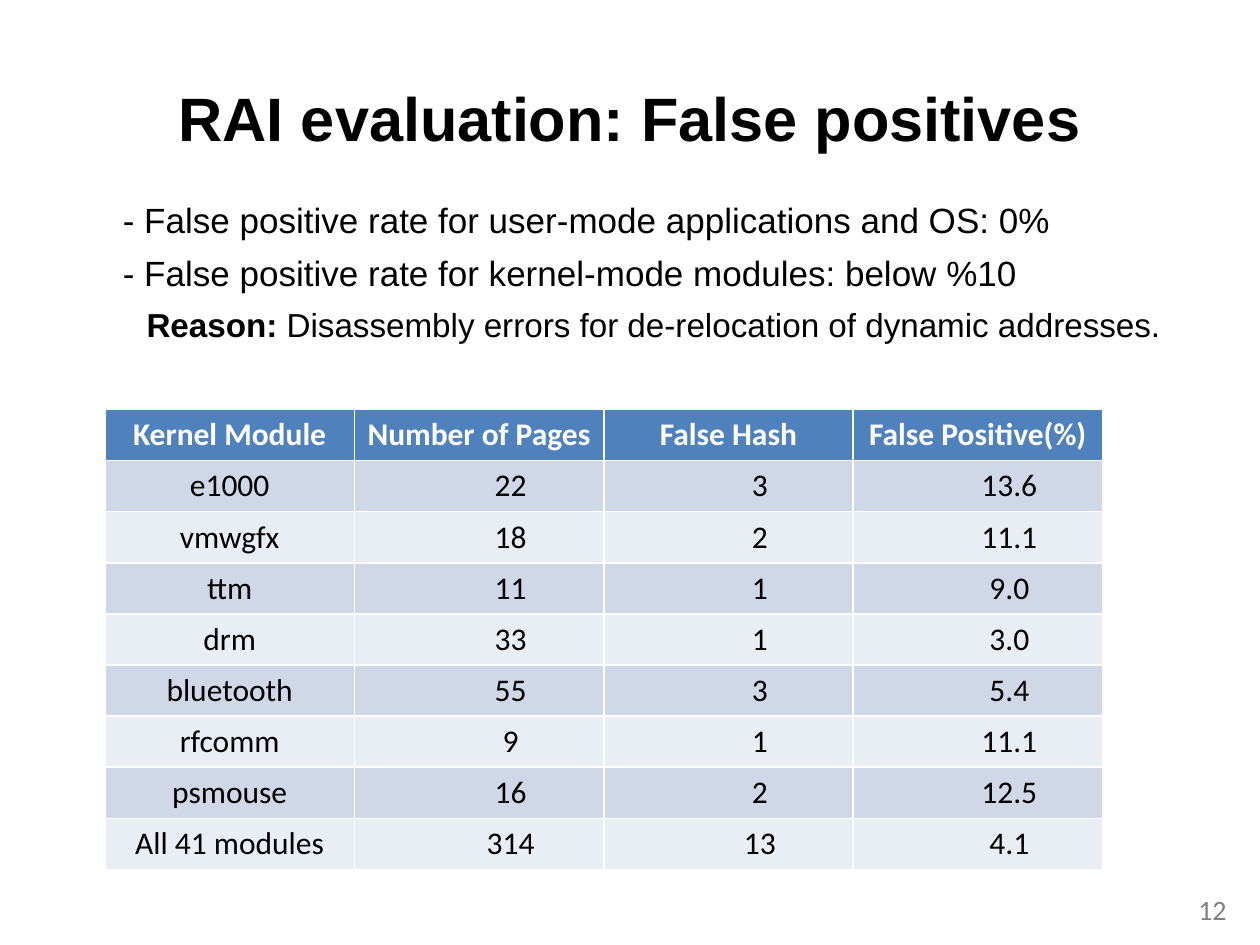
import lxml.etree
import pptx
import pptx.util
import pptx.dml.color
import pptx.enum.text
import pptx.oxml.ns

Pt = pptx.util.Pt
RGB = pptx.dml.color.RGBColor
ALIGN = pptx.enum.text.PP_ALIGN
ANCHOR = pptx.enum.text.MSO_ANCHOR
NO_FIT = pptx.enum.text.MSO_AUTO_SIZE.NONE

BLACK = RGB(0x00, 0x00, 0x00)
WHITE = RGB(0xFF, 0xFF, 0xFF)
GREY = RGB(0x80, 0x80, 0x80)
HEADER = RGB(0x4F, 0x81, 0xBD)
BANDS = (RGB(0xD0, 0xD8, 0xE8), RGB(0xE9, 0xED, 0xF4))

ROWS = [
    ("Kernel Module", "Number of Pages", "False Hash", "False Positive(%)"),
    ("e1000", "22", "3", "13.6"),
    ("vmwgfx", "18", "2", "11.1"),
    ("ttm", "11", "1", "9.0"),
    ("drm", "33", "1", "3.0"),
    ("bluetooth", "55", "3", "5.4"),
    ("rfcomm", "9", "1", "11.1"),
    ("psmouse", "16", "2", "12.5"),
    ("All 41 modules", "314", "13", "4.1"),
]


class Deck:
    """Holds the text styles and the slide being built."""

    heading_font = "Arial"
    data_font = "Calibri"

    def __init__(self, slide):
        self.s = slide

    def place(self, sp, box, **frame):
        sp.left, sp.top, sp.width, sp.height = (Pt(v) for v in box)
        tf = sp.text_frame
        for name, value in {"word_wrap": True, "auto_size": NO_FIT, **frame}.items():
            setattr(tf, name, value)
        return tf

    def text(self, p, text, color=BLACK, **fmt):
        r = p.add_run()
        r.text = text
        for name, value in fmt.items():
            setattr(r.font, name, value)
        r.font.color.rgb = color

    def indent(self, p, left):
        pPr = p._p.get_or_add_pPr()
        pPr.set("marL", str(Pt(left)))
        pPr.set("indent", "0")
        return pPr

    def title(self, text, box):
        tf = self.place(self.s.shapes.title, box, vertical_anchor=ANCHOR.MIDDLE)
        p = tf.paragraphs[0]
        p.alignment = ALIGN.CENTER
        self.text(p, text, name=self.heading_font, size=Pt(35), bold=True)

    def body(self, lines, box):
        tf = self.place(self.s.placeholders[1], box, margin_top=Pt(11.5))
        for i, (align, size, runs) in enumerate(lines):
            p = tf.add_paragraph() if i else tf.paragraphs[0]
            fmt = {"alignment": align, "space_before": Pt(0), "space_after": Pt(6)}
            for name, value in fmt.items():
                setattr(p, name, value)
            pPr = self.indent(p, 27)
            lxml.etree.SubElement(pPr, pptx.oxml.ns.qn("a:buNone"))
            for text, bold in runs:
                self.text(p, text, name=self.heading_font, size=Pt(size), bold=bold)

    def table(self, rows, left, top, col_width, row_height):
        n, m = len(rows), len(rows[0])
        frame = self.s.shapes.add_table(n, m, Pt(left), Pt(top),
                                        Pt(col_width * m), Pt(row_height * n))
        for i, row in enumerate(rows):
            for j, text in enumerate(row):
                self.cell(frame.table.cell(i, j), text, i, j)

    def cell(self, cell, text, i, j):
        cell.fill.solid()
        cell.fill.fore_color.rgb = BANDS[(i - 1) % 2] if i else HEADER
        p = cell.text_frame.paragraphs[0]
        p.alignment = ALIGN.CENTER
        if i and j:  # figures sit one level in
            p.level = 1
            self.indent(p, 36)
        self.text(p, text, BLACK if i else WHITE,
                  name=self.data_font, size=Pt(18), bold=i == 0)

    def page_number(self, text, box):
        sp = self.s.shapes.add_textbox(0, 0, 0, 0)
        tf = self.place(sp, box, vertical_anchor=ANCHOR.MIDDLE)
        p = tf.paragraphs[0]
        p.alignment = ALIGN.RIGHT
        self.text(p, text, GREY, name=self.data_font, size=Pt(16))


def main():
    prs = pptx.Presentation()
    prs.slide_width, prs.slide_height = Pt(720), Pt(540)
    deck = Deck(prs.slides.add_slide(prs.slide_layouts[1]))

    # Heading
    deck.title("RAI evaluation: False positives", (36, 21.6, 648, 90))

    # Findings
    deck.body([
        (ALIGN.LEFT, 20,
         [("- False positive rate for user-mode applications and OS: 0%", False)]),
        (ALIGN.LEFT, 20,
         [("- False positive rate for kernel-mode modules: below %10", False)]),
        (ALIGN.CENTER, 19,
         [("Reason:", True),
          (" Disassembly errors for de-relocation of dynamic addresses.", False)]),
    ], (36, 102.2, 648, 356.4))

    # Page number
    deck.page_number("12", (540, 505.4, 168, 28.8))

    # Results per module
    deck.table(ROWS, left=60, top=234, col_width=142.5, row_height=29.2)

    prs.save("out.pptx")


if __name__ == "__main__":
    main()
